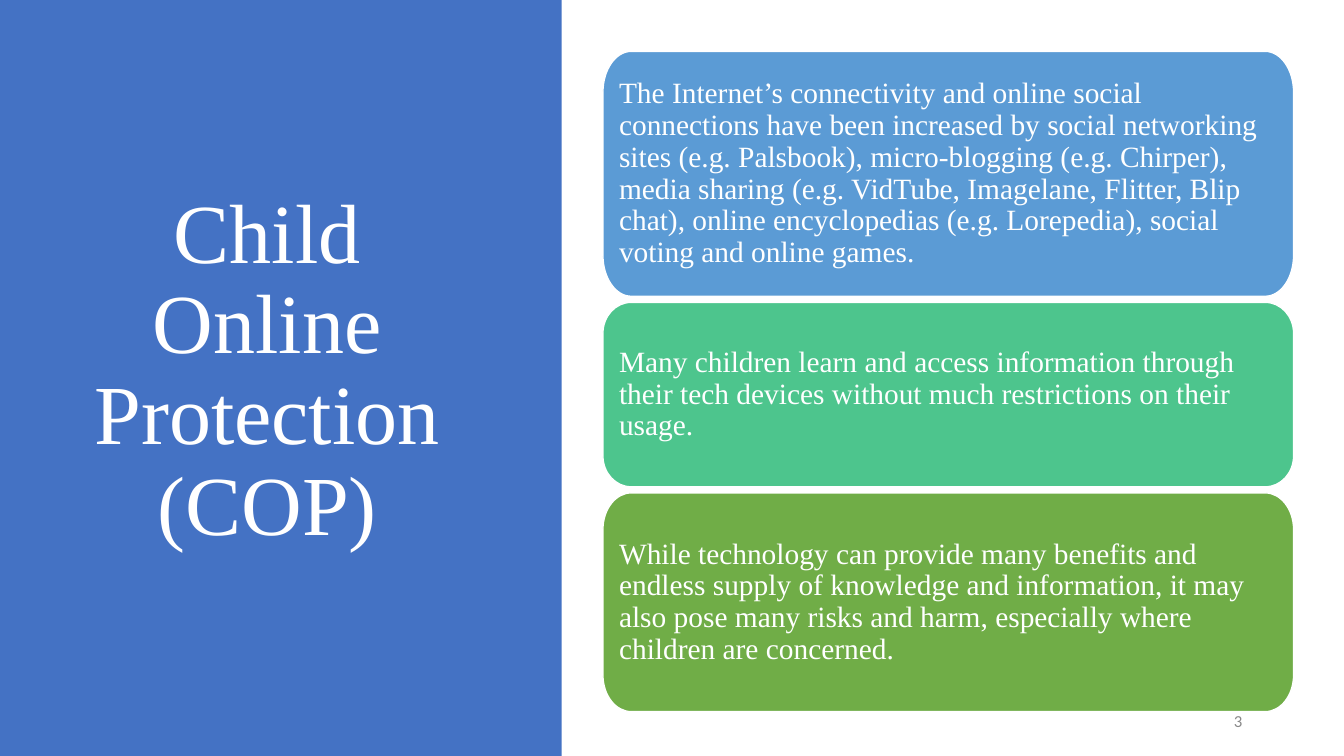
from dataclasses import dataclass

from lxml import etree
from pptx import Presentation
from pptx.dml.color import RGBColor
from pptx.enum.shapes import MSO_SHAPE as Shape
from pptx.enum.text import MSO_ANCHOR as Anchor, MSO_AUTO_SIZE as Fit, PP_ALIGN as Align
from pptx.oxml.ns import qn
from pptx.util import Inches, Pt


@dataclass(frozen=True)
class Theme:
    white: str = "FFFFFF"
    panel: str = "4472C4"
    blue: str = "5B9BD5"
    teal: str = "4DC58D"
    green: str = "70AD47"
    gray: str = "898989"
    serif: str = "Times New Roman"
    sans: str = "Calibri"
    head: int = 60
    body: int = 21
    note: int = 12


theme = Theme()


def write(shape, text, size, font=theme.serif, color=theme.white,
          align=Align.LEFT, inset=None, space=0.9, after=0):
    frame = shape.text_frame
    frame.text = text
    frame.word_wrap = True
    frame.auto_size = Fit.NONE
    frame.vertical_anchor = Anchor.MIDDLE
    if inset:
        frame.margin_left = frame.margin_right = Inches(inset)
        frame.margin_top = frame.margin_bottom = Inches(inset)
    para = frame.paragraphs[0]
    para.alignment = align
    para.line_spacing = space
    para.space_after = Pt(after)
    style = para.runs[0].font
    style.name = font
    style.size = Pt(size)
    style.color.rgb = RGBColor.from_string(color)


def add_card(shapes, left, top, wide, high):
    """Add a box whose four corners are quarter ellipses, each one Bézier curve."""
    rx, ry, pull = 0.28, high / 6, 0.45
    right, base = left + wide, top + high
    dots = [(left, top + ry)]
    # Each corner, with the way its edge arrives and the way the next one leaves
    for x, y, ax, ay, bx, by in [(left, top, 0, 1, 1, 0), (right, top, -1, 0, 0, 1),
                                 (right, base, 0, -1, -1, 0), (left, base, 1, 0, 0, -1)]:
        for dx, dy, part in [(ax, ay, 1), (ax, ay, pull), (bx, by, pull), (bx, by, 1)]:
            dots.append((x + dx * rx * part, y + dy * ry * part))
    start, *rest = [(Inches(x), Inches(y)) for x, y in dots[1:]]
    pen = shapes.build_freeform(*start)
    pen.add_line_segments(rest + [start], close=True)
    card = pen.convert_to_shape()
    lines = list(card._element.iter(qn("a:lnTo")))
    for k in range(0, len(lines), 4):
        curve = etree.Element(qn("a:cubicBezTo"))
        lines[k].addprevious(curve)
        for line in lines[k:k + 3]:
            curve.append(line[0])
            line.getparent().remove(line)
    return card


deck = Presentation()
deck.slide_width, deck.slide_height = Inches(13.33), Inches(7.5)
slide = deck.slides.add_slide(deck.slide_layouts[5])
shapes = slide.shapes

# Title on its coloured panel
title = shapes.title
title.left, title.top = Inches(0.57), Inches(0.68)
title.width, title.height = Inches(4.16), Inches(6.02)
write(title, "Child Online Protection (COP)", theme.head, align=Align.CENTER)

panel = shapes.add_shape(Shape.RECTANGLE, 0, 0, Inches(5.57), deck.slide_height)
panel.shadow.inherit = False
panel.fill.solid()
panel.fill.fore_color.rgb = RGBColor.from_string(theme.panel)
panel.line.fill.background()
title._element.addprevious(panel._element)

# Stacked cards
cards = [
    (2.43, theme.blue,
     "The Internet’s connectivity and online social connections have been increased "
     "by social networking sites (e.g. Palsbook), micro-blogging (e.g. Chirper), media "
     "sharing (e.g. VidTube, Imagelane, Flitter, Blip chat), online encyclopedias "
     "(e.g. Lorepedia), social voting and online games."),
    (1.83, theme.teal,
     "Many children learn and access information through their tech devices without "
     "much restrictions on their usage."),
    (2.17, theme.green,
     "While technology can provide many benefits and endless supply of knowledge and "
     "information, it may also pose many risks and harm, especially where children "
     "are concerned."),
]
top, gap = 0.51, 0.06
for high, color, text in cards:
    card = add_card(shapes, 5.98, top, 6.85, high)
    card.shadow.inherit = False
    card.fill.solid()
    card.fill.fore_color.rgb = RGBColor.from_string(color)
    card.line.color.rgb = RGBColor.from_string(theme.white)
    card.line.width = Pt(1)
    write(card, text, theme.body, inset=0.16, after=8)
    top += high + gap

# Slide number
number = shapes.add_textbox(Inches(9.42), Inches(6.95), Inches(3), Inches(0.4))
write(number, "3", theme.note, font=theme.sans, color=theme.gray,
      align=Align.RIGHT, space=1.0)

deck.save("out.pptx")
